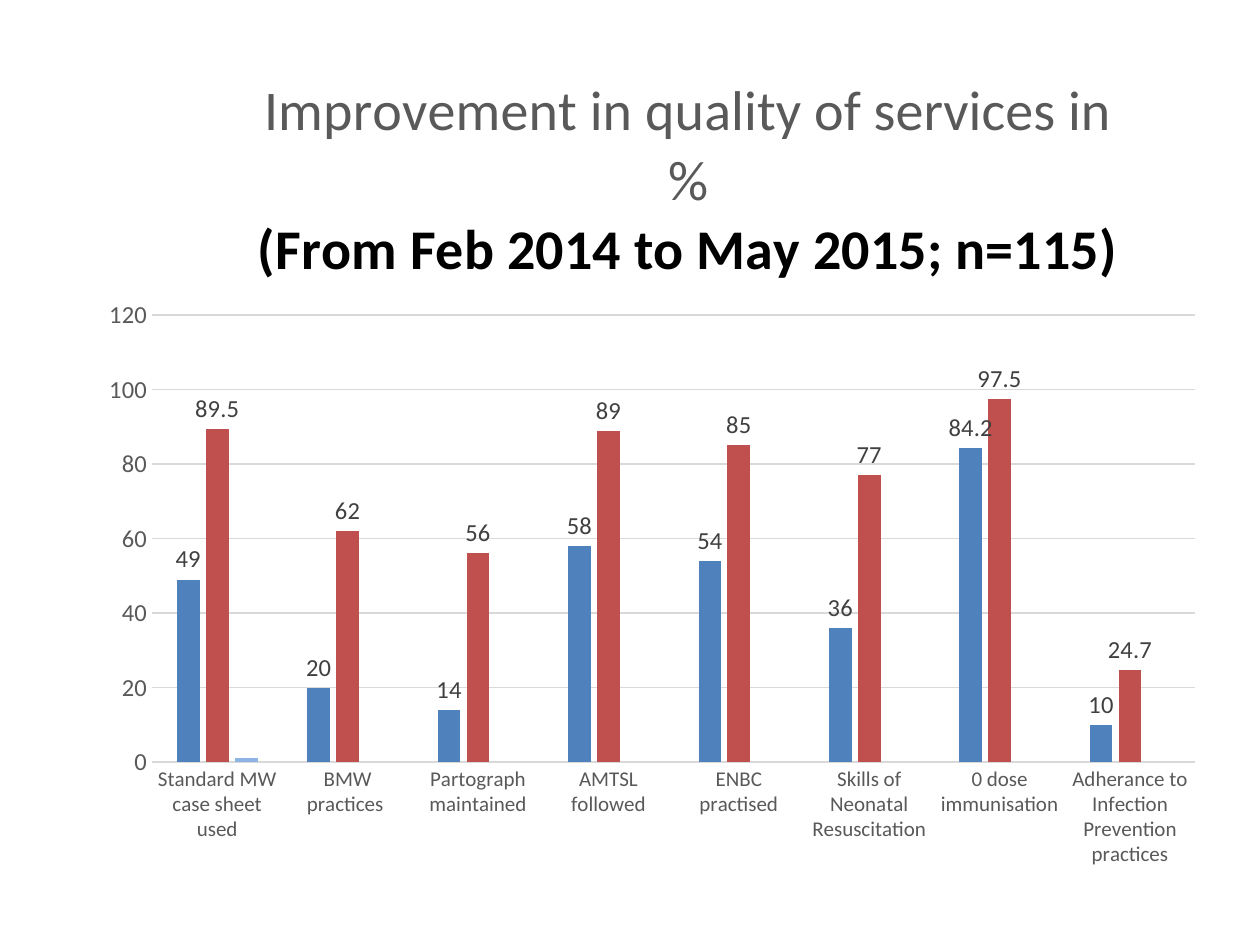
from lxml import etree
from pptx import Presentation
from pptx.chart.data import CategoryChartData
from pptx.dml.color import RGBColor
from pptx.enum import chart as kinds
from pptx.oxml import ns
from pptx.util import Pt

COLORS = {
    "before": "4F81BD",
    "after": "C0504D",
    "extra": "8EB4E3",
    "axis": "595959",
    "grid": "D9D9D9",
    "label": "404040",
    "black": "000000",
}

PRACTICES = [
    ("Standard MW case sheet used", 49, 89.5, 1),
    ("BMW practices ", 20, 62, None),
    ("Partograph maintained", 14, 56, None),
    ("AMTSL followed", 58, 89, None),
    ("ENBC practised", 54, 85, None),
    ("Skills of Neonatal Resuscitation", 36, 77, None),
    ("0 dose immunisation", 84.2, 97.5, None),
    ("Adherance to Infection Prevention practices", 10, 24.7, None),
]


def style_font(font, size, color, bold=False):
    font.name = "Calibri"
    font.size = Pt(size)
    font.bold = bold
    font.color.rgb = RGBColor.from_string(COLORS[color])


def add_text(para, words, **style):
    span = para.add_run()
    span.text = words
    style_font(span.font, **style)


def place(element, **fractions):
    """Set a manual layout, in fractions of the chart area."""
    layout = element.find(ns.qn("c:layout"))
    if layout is None:
        layout = etree.Element(ns.qn("c:layout"))
        element.insert(0, layout)
    manual = etree.SubElement(layout, ns.qn("c:manualLayout"))
    settings = {"xMode": "edge", "yMode": "edge", **fractions}
    if "w" in fractions:
        settings = {"layoutTarget": "inner", **settings}
    for name, value in settings.items():
        etree.SubElement(manual, ns.qn(f"c:{name}")).set("val", str(value))


class ChartPage:
    def __init__(self, deck):
        self.page = deck.slides.add_slide(deck.slide_layouts[6])

    def columns(self, rows, names, left, top, width, height):
        data = CategoryChartData()
        categories, *columns = zip(*rows)
        data.categories = categories
        for name, values in zip(names, columns):
            data.add_series(name, values)
        frame = self.page.shapes.add_chart(
            kinds.XL_CHART_TYPE.COLUMN_CLUSTERED,
            Pt(left), Pt(top), Pt(width), Pt(height), data)
        chart = frame.chart
        chart.has_legend = False
        style_font(chart.font, 10, "black")
        plot = chart.plots[0]
        plot.vary_by_categories = False
        plot.gap_width = 219
        plot.overlap = -27
        place(chart.element.find(".//" + ns.qn("c:plotArea")),
              x=0.06, y=0.33, w=0.92, h=0.53)
        return chart

    def title(self, chart, lines):
        chart.has_title = True
        frame = chart.chart_title.text_frame
        for index, (words, style) in enumerate(lines):
            para = frame.add_paragraph() if index else frame.paragraphs[0]
            add_text(para, words, **style)
        place(chart.element.find(".//" + ns.qn("c:title")), x=0.15, y=0.04)

    def axes(self, chart):
        for axis, size in ((chart.category_axis, 12), (chart.value_axis, 14)):
            axis.major_tick_mark = kinds.XL_TICK_MARK.NONE
            axis.minor_tick_mark = kinds.XL_TICK_MARK.NONE
            style_font(axis.tick_labels.font, size, "axis")
        values = chart.value_axis
        values.minimum_scale, values.maximum_scale = 0, 120
        values.major_unit = 20
        values.has_major_gridlines = True
        values.format.line.fill.background()
        for part in (chart.category_axis, values.major_gridlines):
            part.format.line.color.rgb = RGBColor.from_string(COLORS["grid"])
            part.format.line.width = Pt(0.75)

    def bars(self, series, color, labelled):
        series.invert_if_negative = False
        series.format.fill.solid()
        series.format.fill.fore_color.rgb = RGBColor.from_string(COLORS[color])
        if labelled:
            labels = series.data_labels
            labels.show_value = True
            labels.position = kinds.XL_LABEL_POSITION.OUTSIDE_END
            style_font(labels.font, 14, "label")


def main():
    deck = Presentation()
    deck.slide_width, deck.slide_height = Pt(720), Pt(540)
    page = ChartPage(deck)

    # Chart and its two-part heading
    chart = page.columns(PRACTICES, ("Series 1", "Series 2", "Series 3"),
                         left=48, top=21, width=648, height=482)
    page.title(chart, [
        ("Improvement in quality of services in %",
         dict(size=32, color="axis")),
        ("(From Feb 2014 to May 2015; n=115)",
         dict(size=32, color="black", bold=True)),
    ])
    page.axes(chart)

    # Bars: the small extra column carries no labels
    for series, color in zip(chart.plots[0].series, ("before", "after", "extra")):
        page.bars(series, color, labelled=color != "extra")

    deck.save("out.pptx")


if __name__ == "__main__":
    main()
